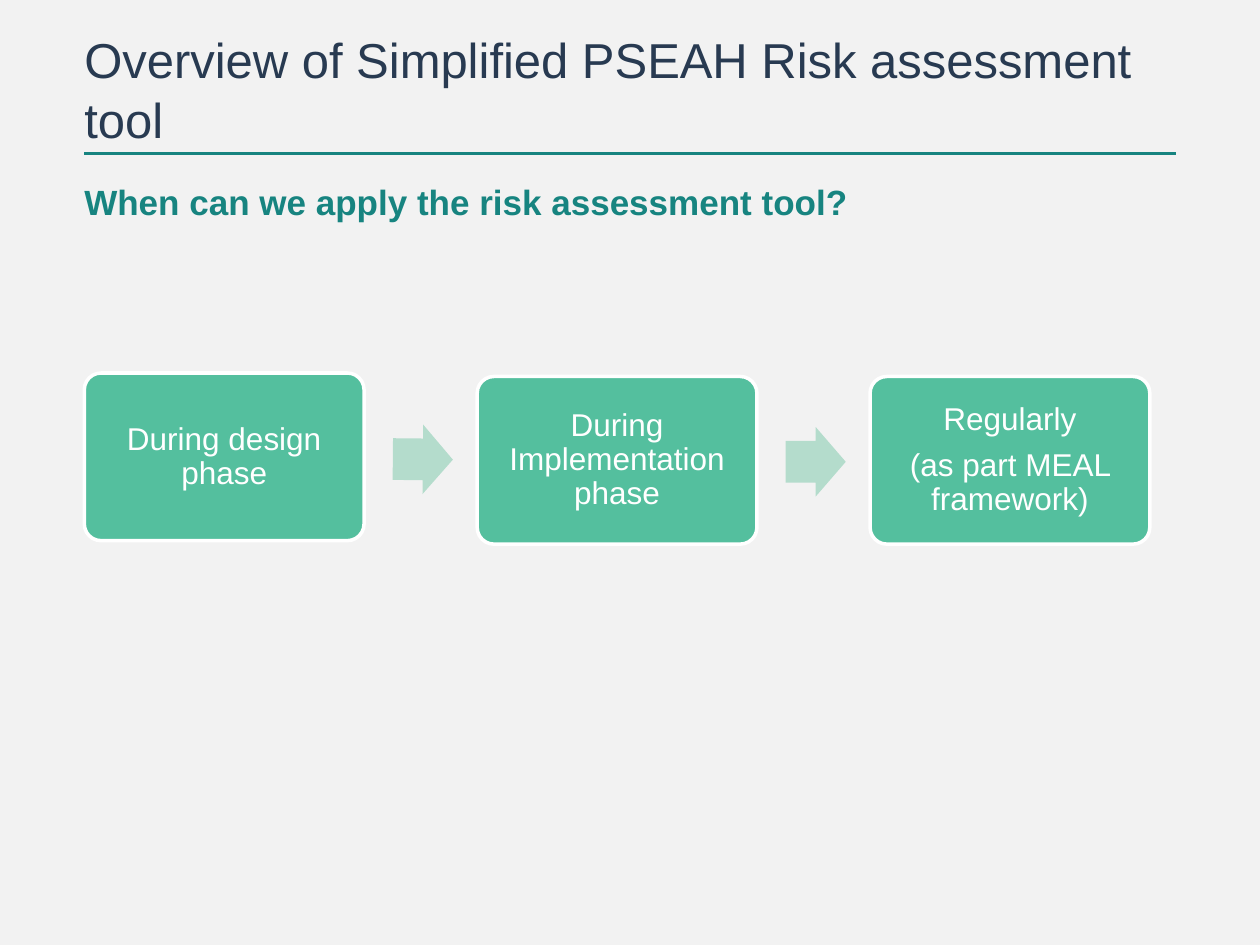
from dataclasses import dataclass

from lxml import etree
from pptx import Presentation
from pptx.dml.color import RGBColor
from pptx.enum.shapes import MSO_CONNECTOR, MSO_SHAPE
from pptx.enum.text import MSO_ANCHOR, MSO_AUTO_SIZE, PP_ALIGN
from pptx.oxml.ns import qn
from pptx.util import Cm, Pt

STRAIGHT = MSO_CONNECTOR.STRAIGHT
ROUNDED = MSO_SHAPE.ROUNDED_RECTANGLE
ARROW = MSO_SHAPE.RIGHT_ARROW
LEFT, CENTER = PP_ALIGN.LEFT, PP_ALIGN.CENTER
TOP, MIDDLE, BOTTOM = MSO_ANCHOR.TOP, MSO_ANCHOR.MIDDLE, MSO_ANCHOR.BOTTOM
NO_FIT = MSO_AUTO_SIZE.NONE


@dataclass(frozen=True)
class Theme:
    font: str = "Arial"
    background: str = "F2F2F2"
    navy: str = "283A51"
    teal: str = "178480"
    green: str = "54BF9E"
    mint: str = "B4DCCC"
    white: str = "FFFFFF"
    title_size: int = 28
    subtitle_size: int = 20
    step_size: int = 18


THEME = Theme()
MARGIN = 1.7
CONTENT_WIDTH = 22
STEP_PITCH = 7.92
ARROW_OFFSET = 6.22
STEPS = [
    (7.52, ["During design phase"]),
    (7.59, ["During Implementation phase"]),
    (7.59, ["Regularly", "(as part MEAL framework)"]),
]
ARROWS = [(8.56, 0.6), (8.61, 0)]


def rgb(color):
    return RGBColor.from_string(color)


def set_frame(tf, anchor, inset=0):
    tf.word_wrap = True
    tf.auto_size = NO_FIT
    tf.vertical_anchor = anchor
    tf.margin_left = tf.margin_right = Cm(inset)
    tf.margin_top = tf.margin_bottom = Cm(inset)


def write(p, text, size, color, align=LEFT, bold=False):
    p.text = text
    p.alignment = align
    p.font.name = THEME.font
    p.font.size = Pt(size)
    p.font.bold = bold
    p.font.color.rgb = rgb(color)


def add_title(s, text):
    sp = s.shapes.title
    sp.left, sp.top = Cm(MARGIN), Cm(1.47)
    sp.width, sp.height = Cm(22.83), Cm(1.52)
    set_frame(sp.text_frame, BOTTOM)
    p = sp.text_frame.paragraphs[0]
    write(p, text, THEME.title_size, THEME.navy)
    p.line_spacing = Pt(34)


def add_rule(s, top):
    line = s.shapes.add_connector(
        STRAIGHT, Cm(MARGIN), Cm(top), Cm(MARGIN + CONTENT_WIDTH), Cm(top))
    line.line.color.rgb = rgb(THEME.teal)
    line.line.width = Pt(1.5)
    etree.SubElement(line._element.spPr, qn("a:effectLst"))


def add_subtitle(s, text):
    sp = s.shapes.add_textbox(Cm(MARGIN), Cm(3.63), Cm(CONTENT_WIDTH), Cm(2.49))
    set_frame(sp.text_frame, TOP)
    write(sp.text_frame.paragraphs[0], text,
          THEME.subtitle_size, THEME.teal, bold=True)


def add_step(s, left, top, lines):
    sp = s.shapes.add_shape(ROUNDED, Cm(left), Cm(top), Cm(5.64), Cm(3.38))
    sp.shadow.inherit = False
    sp.adjustments[0] = 0.1
    sp.fill.solid()
    sp.fill.fore_color.rgb = rgb(THEME.green)
    sp.line.color.rgb = rgb(THEME.white)
    sp.line.width = Pt(2)
    tf = sp.text_frame
    set_frame(tf, MIDDLE, 0.23)
    for i, text in enumerate(lines):
        p = tf.add_paragraph() if i else tf.paragraphs[0]
        write(p, text, THEME.step_size, THEME.white, CENTER)
        p.line_spacing = 0.9
        p.space_after = Pt(6.3)


def add_arrow(s, left, top, rotation):
    sp = s.shapes.add_shape(ARROW, Cm(left), Cm(top), Cm(1.21), Cm(1.4))
    sp.shadow.inherit = False
    sp.rotation = rotation
    sp.adjustments[0] = 0.6
    sp.adjustments[1] = 0.5
    sp.fill.solid()
    sp.fill.fore_color.rgb = rgb(THEME.mint)
    sp.line.fill.background()


def main():
    prs = Presentation()
    prs.slide_width, prs.slide_height = Cm(25.4), Cm(19.05)
    s = prs.slides.add_slide(prs.slide_layouts.get_by_name("Title Only"))
    s.background.fill.solid()
    s.background.fill.fore_color.rgb = rgb(THEME.background)

    add_rule(s, 3.1)
    add_title(s, "Overview of Simplified PSEAH Risk assessment tool")
    add_subtitle(s, "When can we apply the risk assessment tool?")
    for i, (top, lines) in enumerate(STEPS):
        add_step(s, MARGIN + i * STEP_PITCH, top, lines)
    for i, (top, rotation) in enumerate(ARROWS):
        add_arrow(s, MARGIN + ARROW_OFFSET + i * STEP_PITCH, top, rotation)

    prs.save("out.pptx")


if __name__ == "__main__":
    main()
